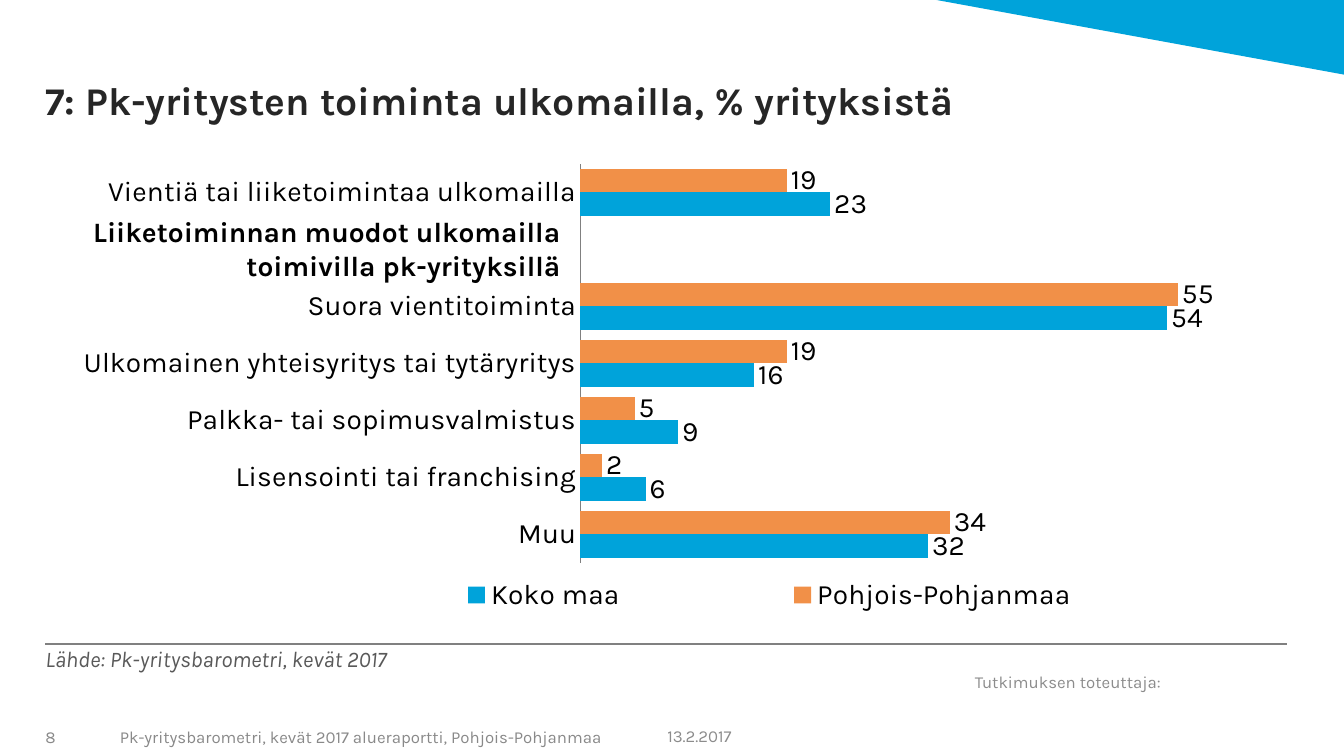
import pptx
import pptx.chart.data
import pptx.dml.color
import pptx.enum.chart
import pptx.enum.shapes
import pptx.enum.text
import pptx.oxml
import pptx.util
from pptx.util import Inches

# Content
FONT = "Karla"
COLORS = {"blue": "00A3DA", "orange": "F19048", "title": "262626", "source": "595959",
          "footer": "898989", "credit": "8C8C8C", "rule": "808080", "black": "000000"}
TITLE = "7: Pk-yritysten toiminta ulkomailla, % yrityksistä"
CATEGORIES = ["Vientiä tai liiketoimintaa ulkomailla", "", "Suora vientitoiminta",
              "Ulkomainen yhteisyritys tai tytäryritys", "Palkka- tai sopimusvalmistus",
              "Lisensointi tai franchising", "Muu"]
SERIES = [("Pohjois-Pohjanmaa", "orange", [19, None, 55, 19, 5, 2, 34]),
          ("Koko maa", "blue", [23, None, 54, 16, 9, 6, 32])]
SUBHEADING = ["Liiketoiminnan muodot ulkomailla", "toimivilla pk-yrityksillä"]
SOURCE = "Lähde: Pk-yritysbarometri, kevät 2017"
# Small print: text, colour, box, left inset
SMALL_PRINT = [
    ("Tutkimuksen toteuttaja:", "credit", (9.57, 6.56, 2.18, 0.41), 0.1),
    ("8", "footer", (0.45, 7.13, 0.63, 0.35), 0),
    ("Pk-yritysbarometri, kevät 2017 alueraportti, Pohjois-Pohjanmaa", "footer",
     (1.09, 7.13, 5.41, 0.35), 0.1),
    ("13.2.2017", "credit", (6.52, 7.12, 1.33, 0.35), 0.1),
]
# Shares of the chart: left, top, width, height
PLOT_AREA = (0.429, 0.012, 0.538, 0.859)
LEGEND_AREA = (0.2, 0.89, 0.77, 0.1)


def rgb(name):
    return pptx.dml.color.RGBColor.from_string(COLORS[name])


def set_font(font, size, color, bold=False, italic=False):
    font.name, font.size = FONT, pptx.util.Pt(size)
    font.bold, font.italic = bold, italic
    font.color.rgb = rgb(color)


def fill_frame(frame, lines, size, color, anchor="TOP", align="LEFT", insets=None, **style):
    frame.word_wrap = True
    frame.auto_size = pptx.enum.text.MSO_AUTO_SIZE.NONE
    frame.vertical_anchor = pptx.enum.text.MSO_ANCHOR[anchor]
    if insets:
        (frame.margin_left, frame.margin_top,
         frame.margin_right, frame.margin_bottom) = map(Inches, insets)
    for index, line in enumerate(lines):
        paragraph = frame.add_paragraph() if index else frame.paragraphs[0]
        paragraph.text = line
        paragraph.alignment = pptx.enum.text.PP_ALIGN[align]
        set_font(paragraph.font, size, color, **style)


def add_text(box, lines, size, color, **layout):
    frame = slide.shapes.add_textbox(*map(Inches, box)).text_frame
    fill_frame(frame, lines, size, color, **layout)


def layout_xml(area, inner=False):
    target = '<c:layoutTarget val="inner"/>' if inner else ""
    modes = "".join(f'<c:{side}Mode val="edge"/>' for side in "xy")
    sizes = "".join(f'<c:{side} val="{share}"/>' for side, share in zip("xywh", area))
    return pptx.oxml.parse_xml(
        '<c:layout xmlns:c="http://schemas.openxmlformats.org/drawingml/2006/chart">'
        f"<c:manualLayout>{target}{modes}{sizes}</c:manualLayout></c:layout>")


def set_layout(element, layout, position):
    for old in element.findall(layout.tag):
        element.remove(old)
    element.insert(position, layout)


presentation = pptx.Presentation()
presentation.slide_width, presentation.slide_height = Inches(13.33), Inches(7.5)
slide = presentation.slides.add_slide(presentation.slide_layouts[5])

# Corner triangle
corner = slide.shapes.add_shape(pptx.enum.shapes.MSO_SHAPE.RIGHT_TRIANGLE,
                                *map(Inches, (9.29, 0, 4.04, 0.74)))
corner.rotation = 180
corner.shadow.inherit = False
corner.fill.solid()
corner.fill.fore_color.rgb = rgb("blue")
corner.line.fill.background()

# Title
title = slide.shapes.title
title.left, title.top, title.width, title.height = map(Inches, (0.45, 0, 12.3, 1.22))
fill_frame(title.text_frame, [TITLE], 28, "title", anchor="BOTTOM",
           insets=(0, 0, 0, 0), bold=True)

# Bar chart
chart_data = pptx.chart.data.CategoryChartData(number_format="#,##0")
chart_data.categories = CATEGORIES
for name, _, values in SERIES:
    chart_data.add_series(name, values)
chart = slide.shapes.add_chart(pptx.enum.chart.XL_CHART_TYPE.BAR_CLUSTERED,
                               *map(Inches, (0.6, 1.57, 12.02, 4.61)), chart_data).chart
set_font(chart.font, 20, "black")
chart.has_title = False
bars = chart.plots[0]
bars.gap_width, bars.overlap, bars.vary_by_categories = 40, 0, False
for series, (_, color, _) in zip(bars.series, SERIES):
    series.format.fill.solid()
    series.format.fill.fore_color.rgb = rgb(color)
    series.invert_if_negative = False
    labels = series.data_labels
    labels.show_value = True
    labels.number_format, labels.number_format_is_linked = "#,##0", False
    labels.position = pptx.enum.chart.XL_LABEL_POSITION.OUTSIDE_END
    set_font(labels.font, 20, "black")

# Axes
category_axis, value_axis = chart.category_axis, chart.value_axis
category_axis.reverse_order = True
category_axis.major_tick_mark = pptx.enum.chart.XL_TICK_MARK.NONE
category_axis.format.line.color.rgb = rgb("rule")
category_axis.format.line.width = pptx.util.Pt(0.75)
value_axis.minimum_scale, value_axis.maximum_scale = 0, 60
value_axis.has_major_gridlines = False
value_axis.visible = False

# Legend and plot placement
chart.has_legend = True
legend = chart.legend
legend.position = pptx.enum.chart.XL_LEGEND_POSITION.RIGHT
legend.include_in_layout = False
set_font(legend.font, 20, "black")
plot_area = bars._element.getparent()
set_layout(plot_area, layout_xml(PLOT_AREA, inner=True), 0)
set_layout(legend._element, layout_xml(LEGEND_AREA), 1)

# Subheading over the empty category
add_text((0.73, 2.08, 4.93, 0.77), SUBHEADING, 20, "black", align="RIGHT", bold=True)

# Rule and source
rule = slide.shapes.add_connector(pptx.enum.shapes.MSO_CONNECTOR.STRAIGHT,
                                  *map(Inches, (0.45, 6.39, 12.76, 6.39)))
rule.line.color.rgb = rgb("rule")
rule.line.width = pptx.util.Pt(1.5)
rule._element.spPr.append(pptx.oxml.parse_xml(
    '<a:effectLst xmlns:a="http://schemas.openxmlformats.org/drawingml/2006/main"/>'))
add_text((0.45, 6.4, 10.62, 0.43), [SOURCE], 16, "source", insets=(0, 0, 0, 0), italic=True)

# Credit and footer
for text, color, box, left_inset in SMALL_PRINT:
    add_text(box, [text], 12, color, anchor="MIDDLE", insets=(left_inset, 0.05, 0.1, 0.05))

presentation.save("out.pptx")
